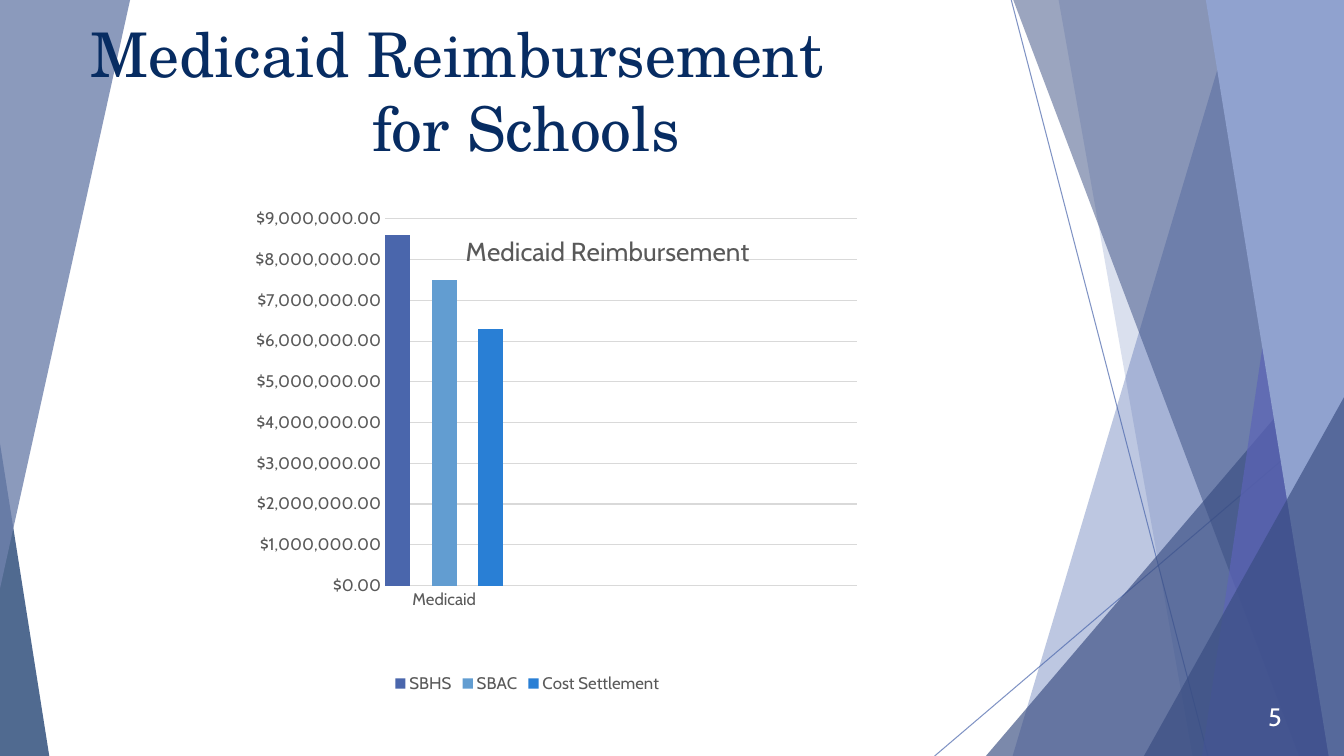
"""Build the Medicaid reimbursement slide: faceted borders, title and column chart."""
from dataclasses import dataclass

from lxml import etree
from pptx import Presentation
from pptx.chart.data import CategoryChartData
from pptx.dml.color import RGBColor
from pptx.enum.chart import XL_CHART_TYPE, XL_LEGEND_POSITION, XL_TICK_MARK
from pptx.enum.shapes import MSO_CONNECTOR, MSO_SHAPE
from pptx.enum.text import MSO_ANCHOR, PP_ALIGN
from pptx.oxml.ns import qn
from pptx.util import Inches, Pt

COLUMNS = XL_CHART_TYPE.COLUMN_CLUSTERED
LEGEND_BOTTOM = XL_LEGEND_POSITION.BOTTOM
NO_TICK = XL_TICK_MARK.NONE
STRAIGHT = MSO_CONNECTOR.STRAIGHT
TRIANGLE = MSO_SHAPE.ISOSCELES_TRIANGLE
TOP, MIDDLE = MSO_ANCHOR.TOP, MSO_ANCHOR.MIDDLE
CENTER, RIGHT = PP_ALIGN.CENTER, PP_ALIGN.RIGHT


@dataclass(frozen=True)
class Theme:
    heading_font: str = "TeX Gyre Schola"
    body_font: str = "Cabin"
    navy: str = "072C62"
    blue: str = "4A66AC"
    deep_blue: str = "384C81"
    violet: str = "5C64B7"
    pale_blue: str = "90A2CF"
    slate: str = "6F81AC"
    sky: str = "629DD1"
    bright_blue: str = "297FD5"
    gray: str = "595959"
    grid: str = "D9D9D9"
    white: str = "FFFFFF"
    title_size: float = 44
    chart_title_size: float = 18.6
    label_size: float = 12
    number_size: float = 18


theme = Theme()


def paint(shape, fill, color, opacity):
    """Give a fill a solid colour at an opacity in percent."""
    fill.solid()
    fill.fore_color.rgb = RGBColor.from_string(color)
    for node in shape._element.spPr.iter(qn("a:srgbClr")):
        etree.SubElement(node, qn("a:alpha"), val=str(opacity * 1000))


def set_layout(parent, index, **values):
    """Fix a chart part at fractions of the chart area."""
    for old in parent.findall(qn("c:layout")):
        parent.remove(old)
    layout = etree.Element(qn("c:layout"))
    manual = etree.SubElement(layout, qn("c:manualLayout"))
    for name, value in values.items():
        etree.SubElement(manual, qn(f"c:{name}"), val=str(value))
    parent.insert(index, layout)


deck = Presentation()
deck.slide_width, deck.slide_height = Inches(13.33), Inches(7.5)
page = deck.slides.add_slide(deck.slide_layouts[6])

for start_x, start_y, end_x, end_y in [(10.03, 0, 11.98, 7.5), (13.33, 4.04, 9.27, 7.5)]:
    ray = page.shapes.add_connector(
        STRAIGHT, Inches(start_x), Inches(start_y), Inches(end_x), Inches(end_y))
    ray.line.width = Pt(0.75)
    paint(ray, ray.line.fill, theme.blue, 70)
    etree.SubElement(ray._element.spPr, qn("a:effectLst"))

right, bottom = 13.33, 7.51
bands = [
    (12.28, 10.04, theme.blue, 36),
    (10.5, 11.83, theme.blue, 20),
    (10.05, 12.89, theme.deep_blue, 50),
    (13.03, 11.92, theme.violet, 70),
    (11.96, 13.18, theme.pale_blue, 100),
]
triangles = [
    (9.77, 3.34, 3.56, 4.17, 1, False, theme.deep_blue, 66),
    (11.34, 3.94, 1.99, 3.57, 1, False, theme.deep_blue, 66),
    (0, 4.4, 0.49, 3.11, 0, False, theme.navy, 70),
    (0, 0, 1.29, 5.84, 0, True, theme.slate, 80),
]
for facet in bands[:2] + triangles[:1] + bands[2:] + triangles[1:]:
    *geometry, color, opacity = facet
    if len(geometry) == 2:
        top_x, bottom_x = geometry
        outline = page.shapes.build_freeform(Inches(top_x), 0)
        corners = [(right, 0), (right, bottom), (bottom_x, bottom)]
        outline.add_line_segments([(Inches(x), Inches(y)) for x, y in corners], close=True)
        shape = outline.convert_to_shape()
    else:
        *frame, apex, flipped = geometry
        shape = page.shapes.add_shape(TRIANGLE, *map(Inches, frame))
        shape.adjustments[0] = apex
        if flipped:
            shape._element.spPr.find(qn("a:xfrm")).set("flipV", "1")
    paint(shape, shape.fill, color, opacity)
    shape.line.fill.background()
    shape.shadow.inherit = False

texts = [
    ((0.61, 0.11, 9.4, 1.44), 1.65, TOP, CENTER, theme.heading_font, theme.title_size,
     theme.navy, [("Medicaid Reimbursement", 0), ("for Schools", 1.37)]),
    ((12.06, 6.91, 0.75, 0.4), 0.1, MIDDLE, RIGHT, theme.body_font, theme.number_size,
     theme.white, [("5", 0)]),
]
for frame, margin, anchor, alignment, font, size, color, lines in texts:
    box = page.shapes.add_textbox(*map(Inches, frame))
    box.text_frame.word_wrap = True
    box.text_frame.margin_right = Inches(margin)
    box.text_frame.vertical_anchor = anchor
    box.text_frame.text = "\n".join(text for text, indent in lines)
    for para, (text, indent) in zip(box.text_frame.paragraphs, lines):
        para.alignment = alignment
        para.font.name, para.font.size = font, Pt(size)
        para.font.color.rgb = RGBColor.from_string(color)
        para._p.get_or_add_pPr().set("marL", str(Inches(indent)))

series_rows = [
    ("SBHS", 8600000, theme.blue),
    ("SBAC", 7500000, theme.sky),
    ("Cost Settlement", 6300000, theme.bright_blue),
]
data = CategoryChartData()
data.categories = ["Medicaid", "", "", ""]
for name, amount, color in series_rows:
    data.add_series(name, [amount, None, None, None])
chart = page.shapes.add_chart(
    COLUMNS, Inches(1.58), Inches(2.07), Inches(7.3), Inches(4.85), data).chart
chart.font.name, chart.font.size = theme.body_font, Pt(theme.label_size)
chart.font.color.rgb = RGBColor.from_string(theme.gray)

plot = chart.plots[0]
plot.vary_by_categories = False
plot.gap_width, plot.overlap = 0, -85
for series, (name, amount, color) in zip(plot.series, series_rows):
    series.format.fill.solid()
    series.format.fill.fore_color.rgb = RGBColor.from_string(color)
set_layout(chart._chartSpace.chart.plotArea, 0, layoutTarget="inner", xMode="edge",
           yMode="edge", x=0.307, y=0.021, w=0.641, h=0.75)

chart.has_title = True
heading = chart.chart_title.text_frame
heading.text = "Medicaid Reimbursement"
heading_font = heading.paragraphs[0].font
heading_font.name, heading_font.size = theme.body_font, Pt(theme.chart_title_size)
heading_font.bold = False
heading_font.color.rgb = RGBColor.from_string(theme.gray)
chart.chart_title.include_in_layout = True
title_node = chart.chart_title._element
set_layout(title_node, 1, xMode="edge", yMode="edge", x=0.41, y=0.04)
title_node.find(qn("c:overlay")).set("val", "1")

chart.has_legend = True
chart.legend.position = LEGEND_BOTTOM
chart.legend.include_in_layout = False

values, categories = chart.value_axis, chart.category_axis
values.minimum_scale, values.maximum_scale, values.major_unit = 0, 9000000, 1000000
values.tick_labels.number_format = "$#,##0.00"
values.tick_labels.number_format_is_linked = False
values.format.line.fill.background()
for axis in (values, categories):
    axis.major_tick_mark = axis.minor_tick_mark = NO_TICK
for line in (values.major_gridlines.format.line, categories.format.line):
    line.width = Pt(0.75)
    line.color.rgb = RGBColor.from_string(theme.grid)

deck.save("out.pptx")
